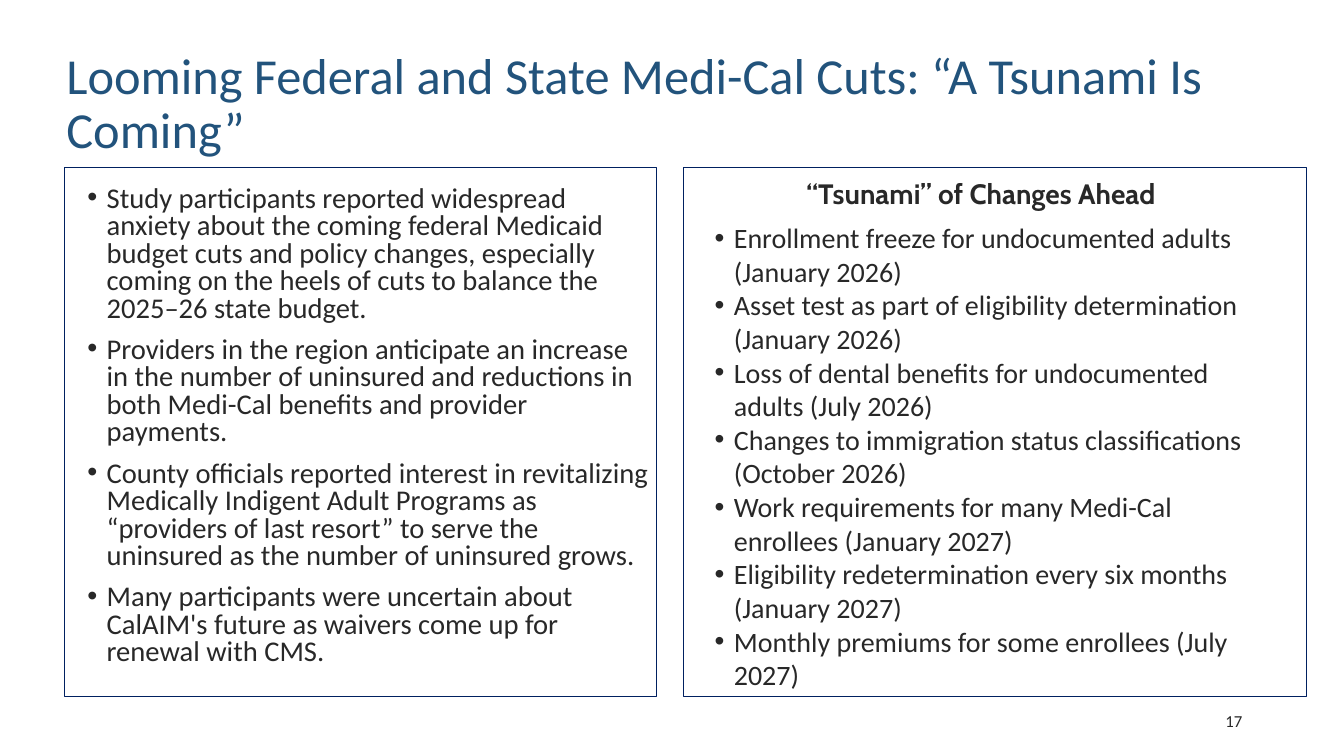
from lxml.etree import SubElement
from pptx import Presentation
from pptx.dml.color import RGBColor
from pptx.enum.shapes import MSO_SHAPE
from pptx.enum.text import MSO_ANCHOR, PP_ALIGN
from pptx.oxml.ns import qn
from pptx.util import Inches, Pt

WIDE, HIGH = 13.33, 7.5
INK, BLUE, NAVY = "282828", "22537C", "002060"
TOP, TALL = 1.66, 5.25
TITLE = "Looming Federal and State Medi-Cal Cuts: “A Tsunami Is Coming”"
HEAD = "“Tsunami” of Changes Ahead"
VIEWS = [
    "Study participants reported widespread anxiety about the coming federal Medicaid budget cuts "
    "and policy changes, especially coming on the heels of cuts to balance the 2025–26 state budget.",
    "Providers in the region anticipate an increase in the number of uninsured and reductions "
    "in both Medi-Cal benefits and provider payments.",
    "County officials reported interest in revitalizing Medically Indigent Adult Programs as "
    "“providers of last resort” to serve the uninsured as the number of uninsured grows.",
    "Many participants were uncertain about CalAIM's future as waivers come up for renewal with CMS.",
]
CHANGES = [
    "Enrollment freeze for undocumented adults (January 2026)",
    "Asset test as part of eligibility determination (January 2026)",
    "Loss of dental benefits for undocumented adults (July 2026)",
    "Changes to immigration status classifications (October 2026)",
    "Work requirements for many Medi-Cal enrollees (January 2027)",
    "Eligibility redetermination every six months (January 2027)",
    "Monthly premiums for some enrollees (July 2027)",
]


def color(code):
    """Turn a hex string into a colour."""
    return RGBColor.from_string(code)


def bullet(para, left):
    """Give a paragraph a hanging bullet."""
    props = para._p.get_or_add_pPr()
    props.set("marL", str(Inches(left)))
    props.set("indent", str(Inches(-0.19)))
    SubElement(props, qn("a:buFont")).set("typeface", "Arial")
    SubElement(props, qn("a:buChar")).set("char", "•")


def write(slide, box, lines, size=20, face="Calibri", ink=INK, bold=False, align=PP_ALIGN.LEFT,
          anchor=MSO_ANCHOR.TOP, pitch=None, gap=0, dent=None):
    """Place lines of text, one paragraph each, in a box."""
    frame = slide.shapes.add_textbox(*map(Inches, box)).text_frame
    frame.word_wrap = True
    frame.vertical_anchor = anchor
    for i, line in enumerate(lines):
        para = frame.paragraphs[0] if i == 0 else frame.add_paragraph()
        para.alignment = align
        if pitch:
            para.line_spacing = pitch
        if i and gap:
            para.space_before = Pt(gap)
        if dent:
            bullet(para, dent)
        run = para.add_run()
        run.text = line
        font = run.font
        font.name, font.size, font.bold = face, Pt(size), bold
        font.color.rgb = color(ink)


def border(slide, box):
    """Draw the thin outline of a panel."""
    rect = slide.shapes.add_shape(MSO_SHAPE.RECTANGLE, *map(Inches, box))
    rect.shadow.inherit = False
    rect.fill.background()
    rect.line.color.rgb = color(NAVY)
    rect.line.width = Pt(0.25)


def views(slide, box):
    """Build the left panel of findings."""
    x, y, w, h = box
    write(slide, (x + 0.07, y + 0.14, w - 0.01, h - 0.17), VIEWS,
          size=20.4, pitch=0.8, gap=10, dent=0.25)
    border(slide, box)


def changes(slide, box):
    """Build the right panel with its heading and dated list."""
    x, y, w, h = box
    write(slide, (x + 0.26, y + 0.04, w - 0.8, 0.44), [HEAD],
          face="Cabin", bold=True, align=PP_ALIGN.CENTER)
    write(slide, (x + 0.09, y + 0.48, w - 0.37, h - 0.44), CHANGES, dent=0.31)
    border(slide, box)


def main():
    """Build and save the slide."""
    deck = Presentation()
    deck.slide_width, deck.slide_height = Inches(WIDE), Inches(HIGH)
    slide = deck.slides.add_slide(deck.slide_layouts[6])
    write(slide, (0.56, 0.32, 11.5, 1.45), [TITLE], size=36, ink=BLUE,
          anchor=MSO_ANCHOR.MIDDLE, pitch=0.9)
    views(slide, (0.64, TOP, 5.87, TALL))
    changes(slide, (6.78, TOP, 6.18, TALL))
    write(slide, (9.42, 6.95, 3, 0.4), ["17"], size=12,
          align=PP_ALIGN.RIGHT, anchor=MSO_ANCHOR.MIDDLE)
    deck.save("out.pptx")


if __name__ == "__main__":
    main()
